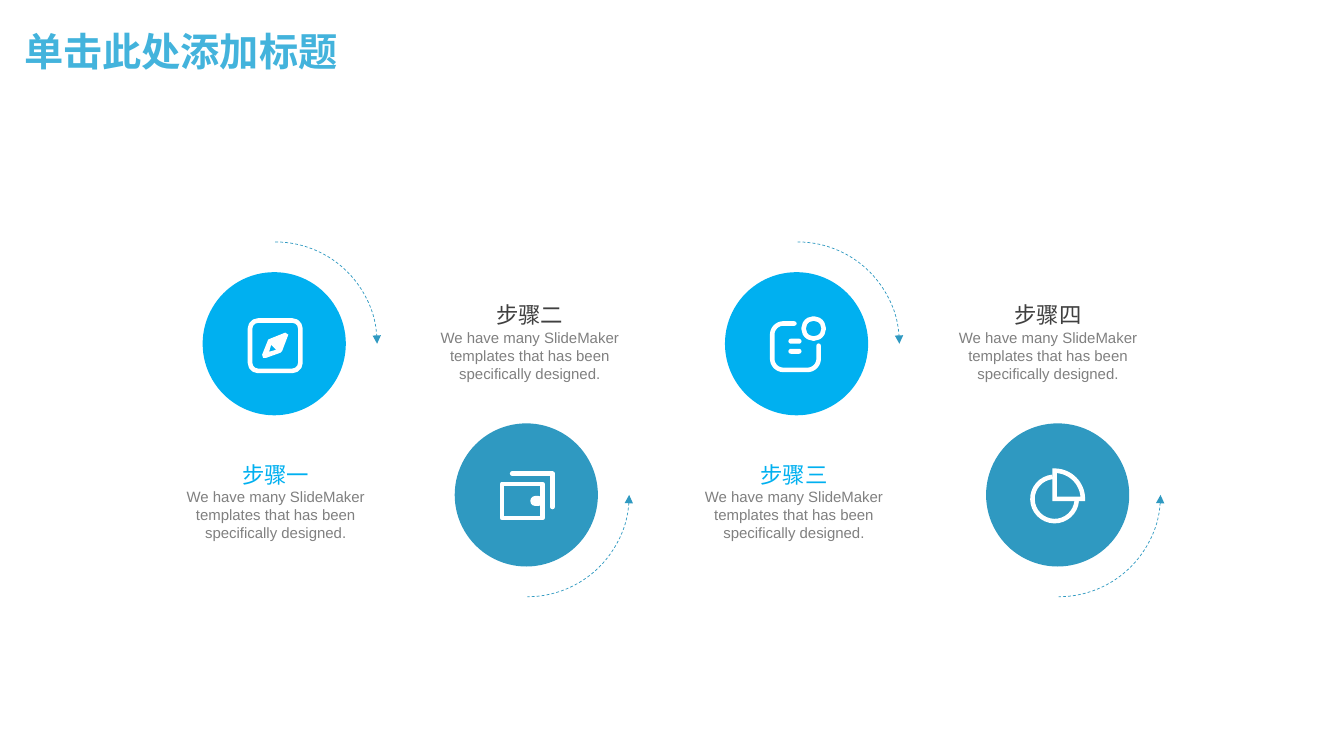
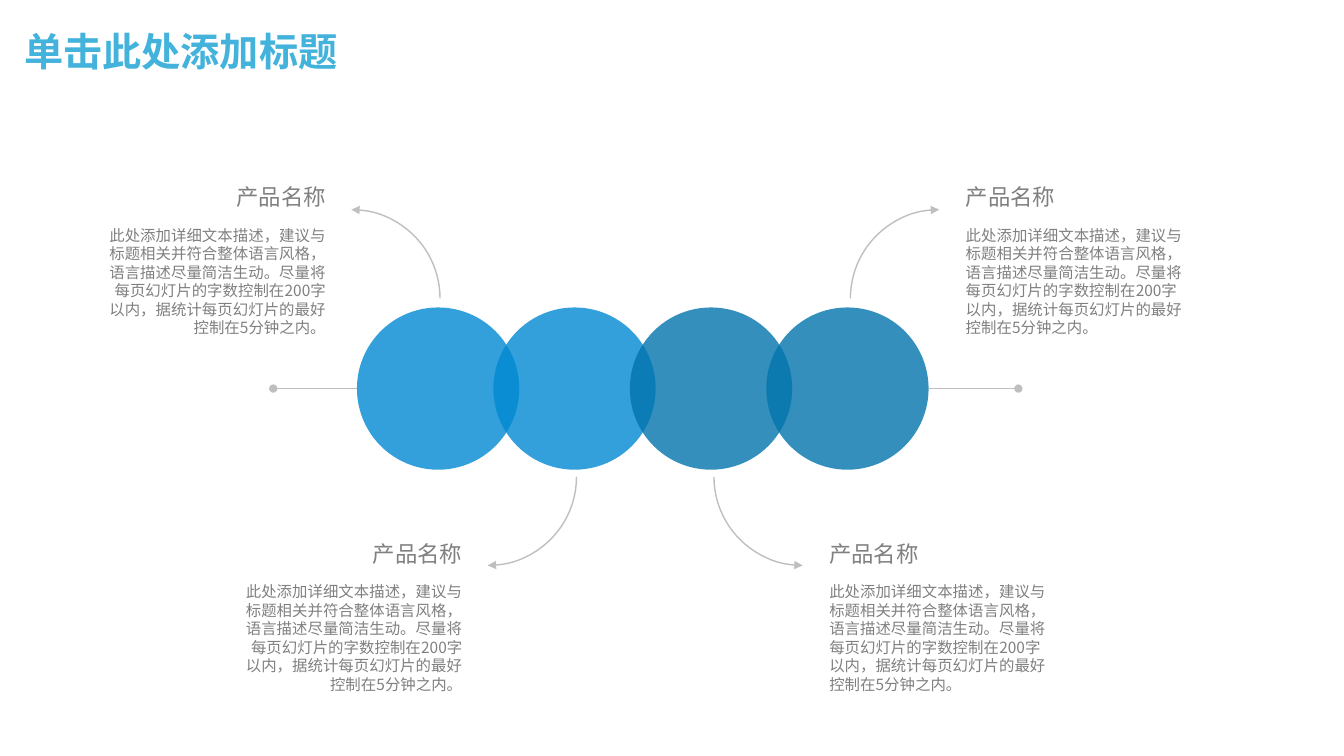
"""Build a four-step slide and a four-product slide with a shared theme."""
from dataclasses import dataclass
from math import cos, radians, sin

from lxml import etree
from pptx import Presentation
from pptx.dml.color import RGBColor
from pptx.enum import dml, shapes, text
from pptx.oxml import ns
from pptx.util import Inches, Pt


@dataclass(frozen=True)
class Theme:
    white: str = "FFFFFF"
    title: str = "43B3DC"
    bright: str = "00B0F0"
    teal: str = "2F99C1"
    sky: str = "0089D2"
    deep: str = "0274AC"
    dark: str = "404040"
    gray: str = "808080"
    line: str = "BFBFBF"
    cjk_font: str = "Noto Sans CJK SC"
    latin_font: str = "Arial"
    title_font: str = "Montserrat"
    title_size: float = 28
    heading_size: float = 16
    body_size: float = 11
    caption_size: float = 10.7
    icon_line: float = 3.25


theme = Theme()
preset = shapes.MSO_SHAPE
align = text.PP_ALIGN


def format_shape(shape, fill=None, opacity=None, line=None, width=1, arrow=None, cap=None, dash=None):
    if hasattr(shape, "fill"):
        shape.shadow.inherit = False
        if fill:
            shape.fill.solid()
            shape.fill.fore_color.rgb = RGBColor.from_string(fill)
        else:
            shape.fill.background()
    else:
        etree.SubElement(shape._element.spPr, ns.qn("a:effectLst"))
    if opacity:
        color = shape._element.spPr.find(ns.qn("a:solidFill"))[0]
        etree.SubElement(color, ns.qn("a:alpha"), val=str(opacity * 1000))
    if not line:
        shape.line.fill.background()
        return
    shape.line.color.rgb = RGBColor.from_string(line)
    shape.line.width = Pt(width)
    if dash:
        shape.line.dash_style = dash
    outline = shape._element.spPr.find(ns.qn("a:ln"))
    if cap:
        outline.set("cap", cap)
        etree.SubElement(outline, ns.qn("a:round" if cap == "rnd" else "a:miter"))
    if arrow:
        end, kind = arrow
        etree.SubElement(outline, ns.qn(f"a:{end}"), type=kind)


def write_text(frame, entries, margin=None):
    frame.word_wrap = True
    if margin is not None:
        for side in ("left", "top", "right", "bottom"):
            setattr(frame, f"margin_{side}", Inches(margin))
    for index, (words, alignment, size, font_name, color, bold) in enumerate(entries):
        paragraph = frame.add_paragraph() if index else frame.paragraphs[0]
        paragraph.alignment = alignment
        run = paragraph.add_run()
        run.text = words
        run.font.color.rgb = RGBColor.from_string(color)
        for name, value in {"size": Pt(size), "bold": bold, "name": font_name}.items():
            setattr(run.font, name, value)
        etree.SubElement(run._r.rPr, ns.qn("a:ea"), typeface=theme.cjk_font)


presentation = Presentation()
presentation.slide_width = Inches(13.33)
presentation.slide_height = Inches(7.5)
slides = [presentation.slides.add_slide(presentation.slide_layouts[5]) for _ in range(2)]
for slide in slides:
    title = slide.shapes.title
    place = {"left": 0.14, "top": 0.14, "width": 11.5, "height": 0.79}
    for name, value in place.items():
        setattr(title, name, Inches(value))
    title.text_frame.vertical_anchor = text.MSO_ANCHOR.MIDDLE
    write_text(title.text_frame, [
        ("单击此处添加标题", align.LEFT, theme.title_size, theme.title_font, theme.title, True)])
    title.text_frame.paragraphs[0].line_spacing = 0.9

steps_slide, products_slide = slides

caption = "We have many SlideMaker templates that has been specifically designed."
steps = [
    ("步骤一", 2.01, 1.63, True),
    ("步骤二", 4.51, 4.15, False),
    ("步骤三", 7.19, 6.77, True),
    ("步骤四", 9.78, 9.29, False),
]
disc, sweep = 1.42, 1.01
for name, left, text_left, raised in steps:
    top = 2.7 if raised else 4.2
    circle = steps_slide.shapes.add_shape(
        preset.OVAL, Inches(left), Inches(top), Inches(disc), Inches(disc))
    format_shape(circle, fill=theme.bright if raised else theme.teal)
    arc = steps_slide.shapes.add_shape(
        preset.ARC, Inches(left + disc / 2 + 0.01 - sweep), Inches(top + disc / 2 - sweep),
        Inches(2 * sweep), Inches(2 * sweep))
    arc.adjustments[0], arc.adjustments[1] = (162, 0) if raised else (0, 54)
    format_shape(arc, line=theme.teal, width=0.5, dash=dml.MSO_LINE.DASH,
                 arrow=("tailEnd" if raised else "headEnd", "triangle"))
    box = steps_slide.shapes.add_textbox(
        Inches(text_left), Inches(4.57 if raised else 2.99), Inches(2.21), Inches(0.81))
    heading_color = theme.bright if raised else theme.dark
    write_text(box.text_frame, [
        (name, align.CENTER, theme.heading_size, theme.cjk_font, heading_color, False),
        (caption, align.CENTER, theme.caption_size, theme.latin_font, theme.gray, False),
    ], margin=0)

stroke = {"line": theme.white, "width": theme.icon_line, "cap": "rnd"}
sharp_stroke = {"line": theme.white, "width": theme.icon_line, "cap": "flat"}
solid = {"fill": theme.white}
icon_presets = [
    (preset.ROUNDED_RECTANGLE, 2.48, 3.18, 0.5, 0.5, 0.16, stroke),
    (preset.OVAL, 7.97, 3.16, 0.2, 0.2, None, stroke),
    (preset.ROUNDED_RECTANGLE, 7.82, 3.36, 0.13, 0.05, 0.5, solid),
    (preset.ROUNDED_RECTANGLE, 7.82, 3.46, 0.13, 0.05, 0.5, solid),
    (preset.RECTANGLE, 4.98, 4.8, 0.4, 0.34, None, stroke),
    (preset.ROUNDED_RECTANGLE, 5.26, 4.92, 0.13, 0.1, 0.5, solid),
]
for kind, left, top, width, height, corner, look in icon_presets:
    part = steps_slide.shapes.add_shape(
        kind, Inches(left), Inches(top), Inches(width), Inches(height))
    if corner:
        part.adjustments[0] = corner
    format_shape(part, **look)

curves = {}
for name, x, y, radius, start, end in [
    ("note_low_right", 8.01, 3.56, 0.11, 0, 90),
    ("note_low_left", 7.77, 3.56, 0.11, 90, 180),
    ("note_top_left", 7.77, 3.32, 0.11, 180, 270),
    ("pie_body", 10.46, 4.95, 0.22, 5, 265),
    ("pie_slice", 10.46, 4.95, 0.28, 270, 360),
]:
    angles = [radians(start + (end - start) * i / 24) for i in range(25)]
    curves[name] = [(x + radius * cos(a), y + radius * sin(a)) for a in angles]

needle = [(2.6, 3.52), (2.66, 3.37), (2.68, 3.36), (2.83, 3.3), (2.86, 3.32),
          (2.8, 3.48), (2.78, 3.5), (2.64, 3.55), (2.61, 3.55)]
needle_hole = [(2.67, 3.49), (2.69, 3.42), (2.74, 3.47)]
note = [(8.12, 3.43), *curves["note_low_right"], *curves["note_low_left"],
        *curves["note_top_left"], (7.88, 3.21)]
wallet_back = [(5.08, 4.7), (5.48, 4.7), (5.48, 5.03)]
pie_slice = [(10.46, 4.95), *curves["pie_slice"]]
icon_outlines = [
    ([needle, needle_hole], True, solid),
    ([note], False, stroke),
    ([wallet_back], False, stroke),
    ([curves["pie_body"]], False, sharp_stroke),
    ([pie_slice], True, sharp_stroke),
]
for contours, closed, look in icon_outlines:
    outlines = [[(Inches(x), Inches(y)) for x, y in points] for points in contours]
    builder = steps_slide.shapes.build_freeform(*outlines[0][0])
    for index, points in enumerate(outlines):
        if index:
            builder.move_to(*points[0])
        builder.add_line_segments(points[1:], close=closed)
    format_shape(builder.convert_to_shape(), **look)

ball, first_left, last_left, ball_top, loop = 1.61, 3.54, 7.6, 3.05, 1.76
pitch = (last_left - first_left) / 3
middle = Inches(ball_top + ball / 2)
for start, end in [(first_left, 2.71), (last_left + ball, 10.1)]:
    connector = products_slide.shapes.add_connector(
        shapes.MSO_CONNECTOR.STRAIGHT, Inches(start), middle, Inches(end), middle)
    format_shape(connector, line=theme.line, arrow=("tailEnd", "oval"))

product_name = "产品名称"
description = ("此处添加详细文本描述，建议与标题相关并符合整体语言风格，语言描述尽量简洁生动。"
               "尽量将每页幻灯片的字数控制在200字以内，据统计每页幻灯片的最好控制在5分钟之内。")
products = [
    (0, True, (162, 0), "headEnd"),
    (3, True, (108, 162), "tailEnd"),
    (1, False, (0, 54), "tailEnd"),
    (2, False, (54, 108), "headEnd"),
]
for position, above, angles, arrow_end in products:
    left = first_left + pitch * position
    on_left = position < 2
    arc_edge = left + ball / 2 + (0.02 if on_left else 0.03)
    arc = products_slide.shapes.add_shape(
        preset.ARC, Inches(arc_edge - loop if on_left else arc_edge),
        Inches(2.08 if above else 3.85), Inches(loop), Inches(loop))
    arc.adjustments[0], arc.adjustments[1] = angles
    format_shape(arc, line=theme.line, arrow=(arrow_end, "triangle"))
    text_edge = left - 0.21 if on_left else left + ball + 0.27
    heading_top = 1.77 if above else 5.31
    for words, top, width, height, size in [
        (description, heading_top + 0.42, 2.4, 1.21, theme.body_size),
        (product_name, heading_top, 1.87, 0.37, theme.heading_size),
    ]:
        box = products_slide.shapes.add_textbox(
            Inches(text_edge - width if on_left else text_edge),
            Inches(top), Inches(width), Inches(height))
        write_text(box.text_frame, [
            (words, align.RIGHT if on_left else align.LEFT, size, theme.cjk_font, theme.gray, False)])
    circle = products_slide.shapes.add_shape(
        preset.OVAL, Inches(left), Inches(ball_top), Inches(ball), Inches(ball))
    format_shape(circle, fill=theme.sky if on_left else theme.deep, opacity=80)

presentation.save("out.pptx")
